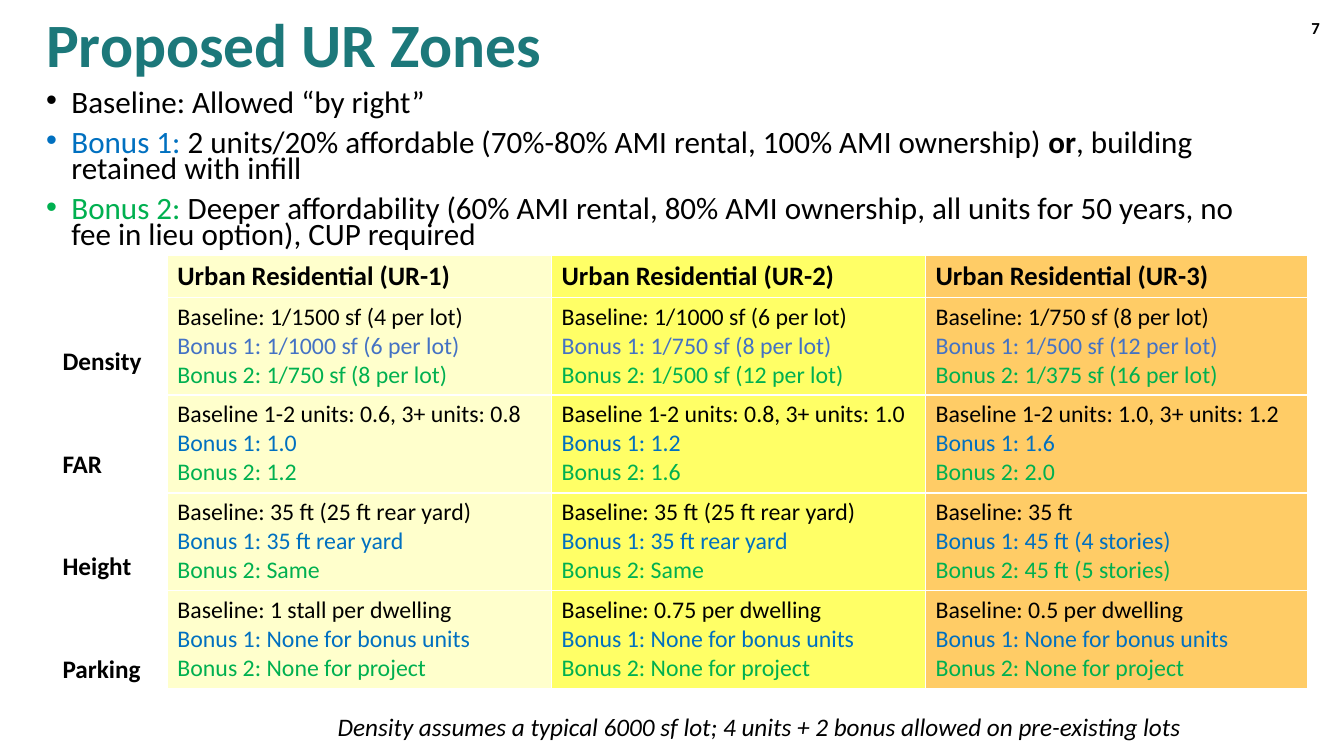
from lxml.etree import SubElement
from pptx import Presentation
from pptx.dml.color import RGBColor
from pptx.enum.text import MSO_ANCHOR as ANCHOR, PP_ALIGN as ALIGN
from pptx.oxml.ns import qn
from pptx.util import Inches, Pt

BLACK = RGBColor(0x00, 0x00, 0x00)
WHITE = RGBColor(0xFF, 0xFF, 0xFF)
TEAL = RGBColor(0x1C, 0x78, 0x7A)
BLUE = RGBColor(0x00, 0x70, 0xC0)
SOFT_BLUE = RGBColor(0x44, 0x72, 0xC4)
GREEN = RGBColor(0x00, 0xB0, 0x50)
PALE_YELLOW = RGBColor(0xFF, 0xFF, 0xCC)
YELLOW = RGBColor(0xFF, 0xFF, 0x66)
ORANGE = RGBColor(0xFF, 0xCC, 0x66)

ZONES = [("Urban Residential (UR-1)", PALE_YELLOW, 3.81),
         ("Urban Residential (UR-2)", YELLOW, 3.71),
         ("Urban Residential (UR-3)", ORANGE, 3.79)]

STANDARDS = {
    "Density": [
        ("Baseline: 1/1500 sf (4 per lot)", "Bonus 1: 1/1000 sf (6 per lot)",
         "Bonus 2: 1/750 sf (8 per lot)"),
        ("Baseline: 1/1000 sf (6 per lot)", "Bonus 1: 1/750 sf (8 per lot)",
         "Bonus 2: 1/500 sf (12 per lot)"),
        ("Baseline: 1/750 sf (8 per lot)", "Bonus 1: 1/500 sf (12 per lot)",
         "Bonus 2: 1/375 sf (16 per lot)")],
    "FAR": [
        ("Baseline 1-2 units: 0.6, 3+ units: 0.8", "Bonus 1: 1.0", "Bonus 2: 1.2"),
        ("Baseline 1-2 units: 0.8, 3+ units: 1.0", "Bonus 1: 1.2", "Bonus 2: 1.6"),
        ("Baseline 1-2 units: 1.0, 3+ units: 1.2", "Bonus 1: 1.6", "Bonus 2: 2.0")],
    "Height": [
        ("Baseline: 35 ft (25 ft rear yard)", "Bonus 1: 35 ft rear yard", "Bonus 2: Same"),
        ("Baseline: 35 ft (25 ft rear yard)", "Bonus 1: 35 ft rear yard", "Bonus 2: Same"),
        ("Baseline: 35 ft", "Bonus 1: 45 ft (4 stories)", "Bonus 2: 45 ft (5 stories)")],
    "Parking": [
        (f"Baseline: {stalls} per dwelling", "Bonus 1: None for bonus units",
         "Bonus 2: None for project")
        for stalls in ("1 stall", "0.75", "0.5")],
}

RULES = [
    [("Baseline: Allowed “by right”", BLACK, False)],
    [("Bonus 1: ", BLUE, False),
     ("2 units/20% affordable (70%-80% AMI rental, 100% AMI ownership) ", BLACK, False),
     ("or", BLACK, True),
     (", building retained with infill", BLACK, False)],
    [("Bonus 2:", GREEN, False),
     (" Deeper affordability (60% AMI rental, 80% AMI ownership, all units for 50 years, "
      "no fee in lieu option), CUP required", BLACK, False)],
]


def add_run(p, text, size=18, color=BLACK, bold=False, italic=False):
    r = p.add_run()
    r.text = text
    r.font.name = "Calibri"
    r.font.size = Pt(size)
    r.font.color.rgb = color
    r.font.bold = bold
    r.font.italic = italic


def paragraph(tf, i):
    return tf.add_paragraph() if i else tf.paragraphs[0]


def add_box(s, left, top, width, height, anchor=ANCHOR.TOP):
    box = s.shapes.add_textbox(Inches(left), Inches(top), Inches(width), Inches(height))
    tf = box.text_frame
    tf.word_wrap = True
    tf.vertical_anchor = anchor
    return tf


def add_bullet(p):
    pPr = p._p.get_or_add_pPr()
    pPr.set("marL", str(Inches(0.25)))
    pPr.set("indent", str(Inches(-0.25)))
    SubElement(pPr, qn("a:buFont"), typeface="Arial")
    SubElement(pPr, qn("a:buChar"), char="•")


def add_rules(s):
    tf = add_box(s, 0.36, 0.87, 12.18, 1.84)
    for i, runs in enumerate(RULES):
        p = paragraph(tf, i)
        add_bullet(p)
        p.line_spacing = 0.7
        p.space_before = Pt(10 if i else 0)
        for text, color, bold in runs:
            add_run(p, text, size=22.2, color=color, bold=bold)


def add_grid(s, left, top, widths, heights):
    frame = s.shapes.add_table(len(heights), len(widths), Inches(left), Inches(top),
                               Inches(sum(widths)), Inches(sum(heights)))
    table = frame.table
    table.first_row = table.horz_banding = False
    for column, width in zip(table.columns, widths):
        column.width = Inches(width)
    for row, height in zip(table.rows, heights):
        row.height = Inches(height)
    return table


def style_cell(cell, fill=None, border=None):
    tcPr = cell._tc.get_or_add_tcPr()
    for side in ("lnL", "lnR", "lnT", "lnB"):
        ln = SubElement(tcPr, qn(f"a:{side}"), w=str(Pt(1.17)))
        if border is None:
            SubElement(ln, qn("a:noFill"))
        else:
            solid = SubElement(ln, qn("a:solidFill"))
            SubElement(solid, qn("a:srgbClr"), val=str(border))
    if fill is None:
        cell.fill.background()
    else:
        cell.fill.solid()
        cell.fill.fore_color.rgb = fill


def add_zone_table(s):
    table = add_grid(s, 1.66, 2.53, [width for _, _, width in ZONES],
                     [0.42] + [0.97] * len(STANDARDS))
    for col, (zone, fill, _) in enumerate(ZONES):
        cell = table.cell(0, col)
        style_cell(cell, fill, WHITE)
        add_run(cell.text_frame.paragraphs[0], zone, size=19, bold=True)
        for row, (name, limits) in enumerate(STANDARDS.items(), 1):
            cell = table.cell(row, col)
            style_cell(cell, fill, WHITE)
            colors = (BLACK, SOFT_BLUE if name == "Density" else BLUE, GREEN)
            for i, (text, color) in enumerate(zip(limits[col], colors)):
                add_run(paragraph(cell.text_frame, i), text, size=17, color=color)


def add_label_table(s):
    table = add_grid(s, 0.52, 3.38, [1.24], [0.41] + [1.02] * (len(STANDARDS) - 1))
    for row, name in enumerate(STANDARDS):
        cell = table.cell(row, 0)
        style_cell(cell)
        cell.vertical_anchor = ANCHOR.BOTTOM
        add_run(cell.text_frame.paragraphs[0], name, bold=True)


def main():
    prs = Presentation()
    prs.slide_width, prs.slide_height = Inches(13.33), Inches(7.5)
    s = prs.slides.add_slide(prs.slide_layouts[6])

    p = add_box(s, 0.36, 0.05, 11.5, 0.85, ANCHOR.MIDDLE).paragraphs[0]
    p.line_spacing = 0.9
    add_run(p, "Proposed UR Zones", size=44, color=TEAL, bold=True)

    add_rules(s)

    p = add_box(s, 10.19, 0.08, 3, 0.4, ANCHOR.MIDDLE).paragraphs[0]
    p.alignment = ALIGN.RIGHT
    add_run(p, "7", size=12, bold=True)

    add_zone_table(s)
    add_label_table(s)

    p = add_box(s, 3.25, 7.01, 9.13, 0.4).paragraphs[0]
    add_run(p, "Density assumes a typical 6000 sf lot; 4 units + 2 bonus allowed "
               "on pre-existing lots", italic=True)

    prs.save("out.pptx")


if __name__ == "__main__":
    main()
